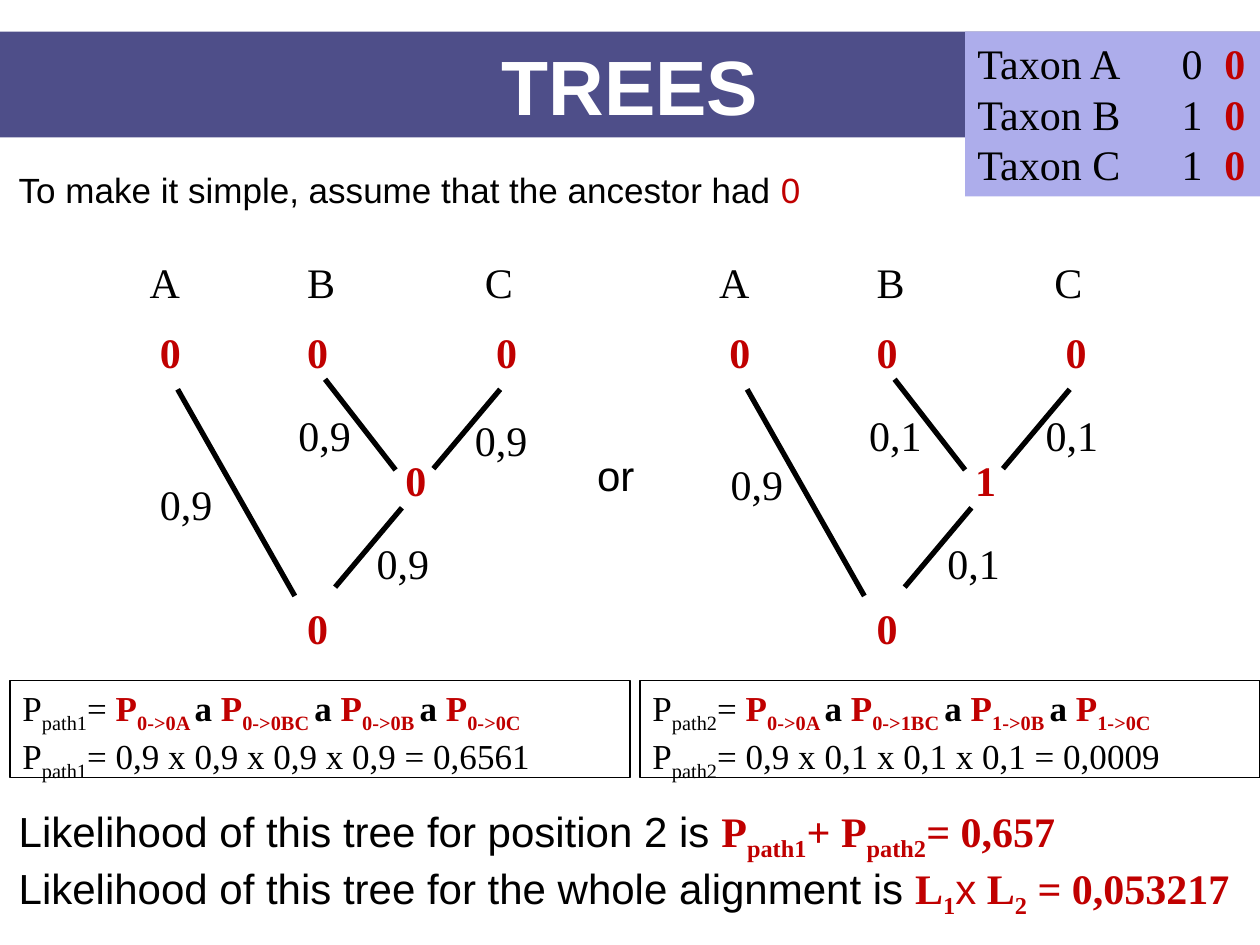
from dataclasses import dataclass

from lxml import etree
from pptx import Presentation
from pptx import util as u
from pptx.dml.color import RGBColor
from pptx.enum import shapes, text
from pptx.oxml.ns import qn

PX = 9144  # 100 px to the inch


@dataclass(frozen=True)
class Theme:
    black: str = "000000"
    red: str = "C00000"
    white: str = "FFFFFF"
    banner: str = "191966"
    banner_alpha: int = 77
    taxa: str = "ADADEB"
    serif: str = "Times New Roman"
    sans: str = "Arial"
    title: int = 44
    body: int = 24
    small: int = 20
    branch: float = 3
    frame: float = 0.75


THEME = Theme()
STYLES = {
    "plain": dict(name=THEME.serif, color=THEME.black, bold=False),
    "sans": dict(name=THEME.sans, color=THEME.black, bold=False),
    "sans red": dict(name=THEME.sans, color=THEME.red, bold=False),
    "bold": dict(name=THEME.serif, color=THEME.black, bold=True),
    "red": dict(name=THEME.serif, color=THEME.red, bold=True),
    "title": dict(name=THEME.sans, color=THEME.white, bold=True),
}
TIPS = {"A": 109, "B": 234, "C": 375}
BRANCHES = [(141, 309, 234, 473), (319, 403, 266, 466),
            (397, 309, 344, 372), (258, 301, 314, 373)]
STATE_TABS = [117, 267]


def emu(*lengths):
    return [u.Emu(length * PX) for length in lengths]


def write(frame, paragraphs, size, tabs=()):
    """Fill a frame with paragraphs of (text, style, is_subscript) runs."""
    for i, runs in enumerate(paragraphs):
        paragraph = frame.paragraphs[0] if i == 0 else frame.add_paragraph()
        if tabs:
            stops = etree.SubElement(paragraph._p.get_or_add_pPr(), qn("a:tabLst"))
            for stop in tabs:
                etree.SubElement(stops, qn("a:tab"), pos=str(stop * PX), algn="l")
        for words, style, *subscript in runs:
            run = paragraph.add_run()
            run.text = words
            look = dict(STYLES[style], size=u.Pt(size))
            run.font.color.rgb = RGBColor.from_string(look.pop("color"))
            for key, value in look.items():
                setattr(run.font, key, value)
            if subscript:
                run.font._element.set("baseline", "-25000")


def add_label(slide, box, paragraphs, size=THEME.body, tabs=()):
    label = slide.shapes.add_textbox(*emu(*box))
    label.text_frame.word_wrap = bool(tabs)
    label.text_frame.auto_size = text.MSO_AUTO_SIZE.SHAPE_TO_FIT_TEXT
    write(label.text_frame, paragraphs, size, tabs)


def add_panel(slide, box, paragraphs, size, fill=None, line=None, tabs=()):
    panel = slide.shapes.add_shape(shapes.MSO_SHAPE.RECTANGLE, *emu(*box))
    panel.shadow.inherit = False
    if fill:
        panel.fill.solid()
        panel.fill.fore_color.rgb = RGBColor.from_string(fill)
    else:
        panel.fill.background()
    if line:
        panel.line.color.rgb = RGBColor.from_string(line)
        panel.line.width = u.Pt(THEME.frame)
    else:
        panel.line.fill.background()
    frame = panel.text_frame
    frame.word_wrap = True
    frame.vertical_anchor = text.MSO_ANCHOR.TOP
    write(frame, paragraphs, size, tabs)
    for paragraph in frame.paragraphs:
        paragraph.alignment = text.PP_ALIGN.LEFT


def add_banner(slide, box):
    title = slide.shapes.title
    for side, length in zip(("left", "top", "width", "height"), emu(*box)):
        setattr(title, side, length)
    title.fill.solid()
    title.fill.fore_color.rgb = RGBColor.from_string(THEME.banner)
    color = title._element.spPr.find(f".//{qn('a:srgbClr')}")
    etree.SubElement(color, qn("a:alpha"), val=str(THEME.banner_alpha * 1000))
    frame = title.text_frame
    frame.auto_size = text.MSO_AUTO_SIZE.NONE
    frame.vertical_anchor = text.MSO_ANCHOR.MIDDLE
    write(frame, [[("TREES", "title")]], THEME.title)
    frame.paragraphs[0].alignment = text.PP_ALIGN.CENTER


def add_taxa(slide, box):
    states = {"A": 0, "B": 1, "C": 1}
    rows = [[(f"Taxon {taxon}\t{state}\t", "plain"), ("0", "red")]
            for taxon, state in states.items()]
    add_panel(slide, box, rows, THEME.body, fill=THEME.taxa, tabs=[162, 196])


def add_tree(slide, left, inner_state, probabilities):
    """Draw a tree; probabilities are (x, y, value), x counted from left."""
    for x1, y1, x2, y2 in BRANCHES:
        branch = slide.shapes.add_connector(
            shapes.MSO_CONNECTOR.STRAIGHT, *emu(left + x1, y1, left + x2, y2))
        branch.line.color.rgb = RGBColor.from_string(THEME.black)
        branch.line.width = u.Pt(THEME.branch)
        etree.SubElement(branch._element.spPr, qn("a:effectLst"))
    for taxon, x in TIPS.items():
        add_label(slide, (left + x, 199, 43, 51), [[(taxon, "plain")]])
    add_label(slide, (left + 117, 254, 306, 51), [[("0\t0\t0", "red")]],
              tabs=STATE_TABS)
    for x, y, state in [(234, 473, "0"), (312, 356, inner_state)]:
        add_label(slide, (left + x, y, 37, 51), [[(state, "red")]])
    for x, y, value in probabilities:
        add_label(slide, (left + x, y, 62, 51), [[(value, "plain")]])


def add_formula(slide, box, path_name, steps, product):
    start = [("P", "plain"), (path_name, "plain", True)]
    symbols = start + [("= ", "plain")]
    for i, step in enumerate(steps):
        if i:
            symbols.append(("a ", "bold"))
        symbols += [("P", "red"), (f"{step} " if i < len(steps) - 1 else step, "red", True)]
    add_panel(slide, box, [symbols, start + [(f"= {product}", "plain")]],
              THEME.small, line=THEME.black)


def add_conclusion(slide, box):
    position = [("Likelihood of this tree for position 2 is ", "sans"),
                ("P", "red"), ("path1", "red", True),
                ("+ P", "red"), ("path2", "red", True), ("= 0,657", "red")]
    alignment = [("Likelihood of this tree for the whole alignment is ", "sans"),
                 ("L", "red"), ("1", "red", True), ("x", "sans red"),
                 (" L", "red"), ("2", "red", True), (" = 0,053217", "red")]
    add_label(slide, box, [position, alignment])


def main():
    deck = Presentation()
    deck.slide_width, deck.slide_height = emu(1000, 750)
    slide = deck.slides.add_slide(deck.slide_layouts[5])
    add_banner(slide, (0, 25, 1000, 84))
    add_taxa(slide, (766, 25, 234, 131))
    add_label(slide, (5, 129, 668, 44),
              [[("To make it simple, assume that the ancestor had ", "sans"),
                ("0", "sans red")]], THEME.small)
    add_tree(slide, 0, "0", [(117, 375, "0,9"), (289, 422, "0,9"),
                             (227, 320, "0,9"), (367, 324, "0,9")])
    add_label(slide, (464, 352, 50, 51), [[("or", "sans")]])
    add_tree(slide, 452, "1", [(118, 359, "0,9"), (290, 422, "0,1"),
                               (228, 320, "0,1"), (368, 320, "0,1")])
    add_formula(slide, (8, 540, 492, 77), "path1",
                ["0->0A", "0->0BC", "0->0B", "0->0C"],
                "0,9 x 0,9 x 0,9 x 0,9 = 0,6561")
    add_formula(slide, (508, 540, 492, 77), "path2",
                ["0->0A", "0->1BC", "1->0B", "1->0C"],
                "0,9 x 0,1 x 0,1 x 0,1 = 0,0009")
    add_conclusion(slide, (5, 634, 1005, 91))
    deck.save("out.pptx")


if __name__ == "__main__":
    main()
